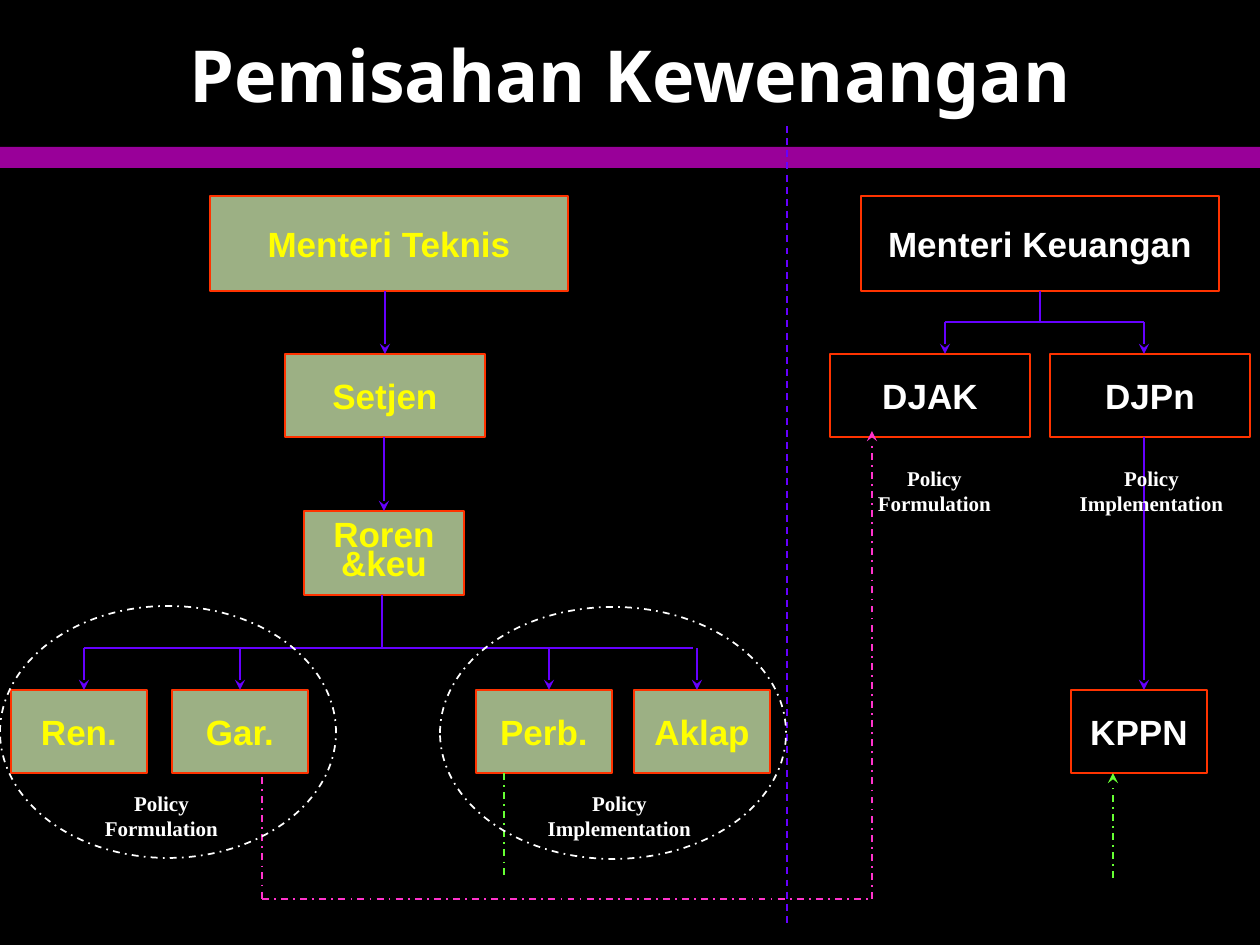
"""Build the slide on the separation of authority between ministries."""
from dataclasses import dataclass

from lxml import etree
from pptx import Presentation
from pptx.dml.color import RGBColor
from pptx.enum.dml import MSO_LINE
from pptx.enum.shapes import MSO_CONNECTOR, MSO_SHAPE
from pptx.enum.text import MSO_ANCHOR, MSO_AUTO_SIZE, PP_ALIGN
from pptx.oxml.ns import qn
from pptx.util import Emu, Pt

PX_PER_INCH = 126
EMU_PER_INCH = 914400
WIDTH, HEIGHT = 1260, 945
TOP, BOTTOM = 0, 2

BLACK = RGBColor(0x00, 0x00, 0x00)
WHITE = RGBColor(0xFF, 0xFF, 0xFF)
PURPLE = RGBColor(0x99, 0x00, 0x99)
SAGE = RGBColor(0x9C, 0xB0, 0x84)
YELLOW = RGBColor(0xFF, 0xFF, 0x00)
RED = RGBColor(0xFF, 0x33, 0x00)
VIOLET = RGBColor(0x66, 0x00, 0xFF)
GREEN = RGBColor(0x66, 0xFF, 0x33)
PINK = RGBColor(0xFF, 0x33, 0xCC)

SOLID, DASH, DASH_DOT = MSO_LINE.SOLID, MSO_LINE.DASH, MSO_LINE.DASH_DOT
RECTANGLE, OVAL = MSO_SHAPE.RECTANGLE, MSO_SHAPE.OVAL
STRAIGHT = MSO_CONNECTOR.STRAIGHT
CENTER, MIDDLE, UPPER = PP_ALIGN.CENTER, MSO_ANCHOR.MIDDLE, MSO_ANCHOR.TOP
NO_AUTOFIT = MSO_AUTO_SIZE.NONE

MINISTER, DIRECTORATE, BUREAU, UNIT = (358, 95), (200, 83), (160, 84), (136, 83)
CAPTION = (189, 64)
MINISTER_Y, DIRECTORATE_Y, BUREAU_Y, UNIT_Y = 196, 354, 511, 690
FINANCE_BUS_Y, UNIT_BUS_Y, REPORT_Y = 322, 648, 899


@dataclass(frozen=True)
class Office:
    name: str
    x: int
    y: int
    size: tuple[int, int]
    fill: RGBColor = SAGE
    color: RGBColor = YELLOW


@dataclass(frozen=True)
class Link:
    start: tuple[int, int]
    end: tuple[int, int]
    color: RGBColor = VIOLET
    dash: MSO_LINE = SOLID
    arrow: bool = False
    from_office: str = ""
    to_office: str = ""


@dataclass(frozen=True)
class Caption:
    text: str
    x: int
    y: int


@dataclass(frozen=True)
class Ring:
    x: int
    y: int
    width: int
    height: int


OFFICES = [
    Office("Menteri Teknis", 210, MINISTER_Y, MINISTER),
    Office("Menteri Keuangan", 861, MINISTER_Y, MINISTER, BLACK, WHITE),
    Office("Setjen", 285, DIRECTORATE_Y, DIRECTORATE),
    Office("DJAK", 830, DIRECTORATE_Y, DIRECTORATE, BLACK, WHITE),
    Office("DJPn", 1050, DIRECTORATE_Y, DIRECTORATE, BLACK, WHITE),
    Office("Roren\n&keu", 304, BUREAU_Y, BUREAU),
    Office("Ren.", 11, UNIT_Y, UNIT),
    Office("Gar.", 172, UNIT_Y, UNIT),
    Office("Perb.", 476, UNIT_Y, UNIT),
    Office("Aklap", 634, UNIT_Y, UNIT),
    Office("KPPN", 1071, UNIT_Y, UNIT, BLACK, WHITE),
]

UNIT_DROPS = [(84, ""), (240, "Gar."), (549, ""), (697, "")]
LINKS = [
    Link((787, 126), (787, 924), dash=DASH),
    Link((385, 291), (385, 354), arrow=True, to_office="Setjen"),
    Link((384, 437), (384, 511), arrow=True, to_office="Roren\n&keu"),
    Link((382, 595), (382, UNIT_BUS_Y)),
    Link((84, UNIT_BUS_Y), (693, UNIT_BUS_Y)),
    *[Link((x, UNIT_BUS_Y), (x, UNIT_Y), arrow=True, to_office=name)
      for x, name in UNIT_DROPS],
    Link((1040, 291), (1040, FINANCE_BUS_Y), from_office="Menteri Keuangan"),
    Link((945, FINANCE_BUS_Y), (1144, FINANCE_BUS_Y)),
    *[Link((x, FINANCE_BUS_Y), (x, DIRECTORATE_Y), arrow=True) for x in (945, 1144)],
    Link((1144, 437), (1144, UNIT_Y), arrow=True),
    Link((504, 773), (504, 878), GREEN, DASH_DOT),
    Link((1113, 878), (1113, 773), GREEN, DASH_DOT, True),
    Link((262, 777), (262, REPORT_Y), PINK, DASH_DOT),
    Link((262, REPORT_Y), (872, REPORT_Y), PINK, DASH_DOT),
    Link((872, REPORT_Y), (872, 431), PINK, DASH_DOT, True),
]

CAPTIONS = [
    Caption("Policy Formulation", 67, 784),
    Caption("Policy Implementation", 525, 784),
    Caption("Policy Formulation", 840, 459),
    Caption("Policy Implementation", 1057, 459),
]
RINGS = [Ring(440, 607, 346, 252), Ring(0, 606, 336, 252)]


def px(length: int) -> Emu:
    """Turn pixels into EMU."""
    return Emu(round(length * EMU_PER_INCH / PX_PER_INCH))


def write_text(shape, text: str, font: str, size: int, color: RGBColor,
               anchor=MIDDLE, wrap: bool = True) -> None:
    """Set centred bold text in a shape."""
    frame = shape.text_frame
    frame.text = text
    frame.word_wrap = wrap
    frame.auto_size = NO_AUTOFIT
    frame.vertical_anchor = anchor
    for para in frame.paragraphs:
        para.alignment = CENTER
        for span in para.runs:
            span.font.name = font
            span.font.size = Pt(size)
            span.font.bold = True
            span.font.color.rgb = color


def draw_shape(page, kind, x: int, y: int, width: int, height: int):
    """Add a preset shape without shadow."""
    shape = page.shapes.add_shape(kind, px(x), px(y), px(width), px(height))
    shape.shadow.inherit = False
    return shape


def draw_office(page, office: Office):
    """Draw one office box and return it."""
    box = draw_shape(page, RECTANGLE, office.x, office.y, *office.size)
    box.fill.solid()
    box.fill.fore_color.rgb = office.fill
    box.line.color.rgb = RED
    box.line.width = Pt(1)
    write_text(box, office.name, "Arial", 20, office.color, wrap=False)
    paragraphs = box.text_frame.paragraphs
    if len(paragraphs) > 1:
        for para in paragraphs:
            para.line_spacing = 0.7
    return box


def draw_link(page, link: Link, boxes: dict) -> None:
    """Draw one connector, joined to its offices where named."""
    ends = [px(value) for value in (*link.start, *link.end)]
    connector = page.shapes.add_connector(STRAIGHT, *ends)
    if link.from_office:
        connector.begin_connect(boxes[link.from_office], BOTTOM)
    if link.to_office:
        connector.end_connect(boxes[link.to_office], TOP)
    connector.line.color.rgb = link.color
    connector.line.width = Pt(1)
    connector.line.dash_style = link.dash
    if link.arrow:
        outline = connector.line._get_or_add_ln()
        etree.SubElement(outline, qn("a:tailEnd"), type="stealth")
    etree.SubElement(connector._element.spPr, qn("a:effectLst"))


def draw_caption(page, caption: Caption) -> None:
    """Draw one policy caption."""
    box = page.shapes.add_textbox(px(caption.x), px(caption.y), *map(px, CAPTION))
    write_text(box, caption.text, "Times New Roman", 12, WHITE, UPPER)


def draw_ring(page, ring: Ring) -> None:
    """Draw one dash-dotted ring around a group of units."""
    oval = draw_shape(page, OVAL, ring.x, ring.y, ring.width, ring.height)
    oval.fill.background()
    oval.line.color.rgb = WHITE
    oval.line.width = Pt(1)
    oval.line.dash_style = DASH_DOT


def draw_heading(page) -> None:
    """Draw the title and the band under it."""
    band = draw_shape(page, RECTANGLE, 0, 147, WIDTH, 21)
    band.fill.solid()
    band.fill.fore_color.rgb = PURPLE
    band.line.fill.background()
    title = page.shapes.title
    title.left, title.top, title.width, title.height = map(px, (95, 21, 1071, 105))
    write_text(title, "Pemisahan Kewenangan", "Noto Sans", 41, WHITE)


def main() -> None:
    """Build and save the deck."""
    deck = Presentation()
    deck.slide_width, deck.slide_height = px(WIDTH), px(HEIGHT)
    page = deck.slides.add_slide(deck.slide_layouts.get_by_name("Title Only"))
    page.background.fill.solid()
    page.background.fill.fore_color.rgb = BLACK
    draw_heading(page)
    boxes = {office.name: draw_office(page, office) for office in OFFICES}
    for link in LINKS:
        draw_link(page, link, boxes)
    for caption in CAPTIONS:
        draw_caption(page, caption)
    for ring in RINGS:
        draw_ring(page, ring)
    deck.save("out.pptx")


if __name__ == "__main__":
    main()
